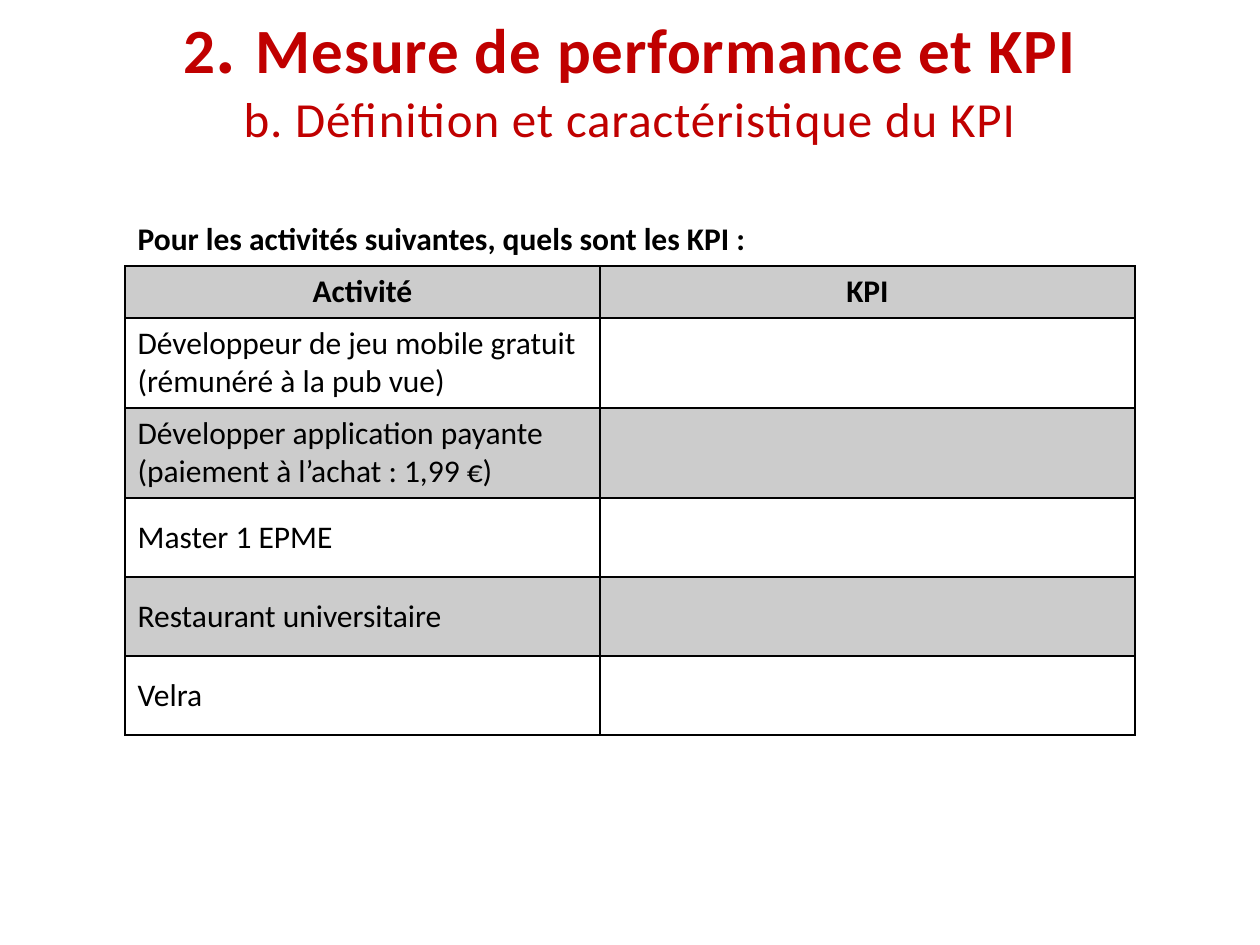
from dataclasses import dataclass

from lxml.etree import SubElement
from pptx import Presentation
from pptx.dml.color import RGBColor
from pptx.enum.text import MSO_ANCHOR, PP_ALIGN
from pptx.oxml.ns import qn
from pptx.util import Emu, Pt


@dataclass(frozen=True)
class Theme:
    """Colours, font and type sizes of the slide."""
    font: str = "Calibri"
    accent: str = "C00000"
    ink: str = "000000"
    title_size: int = 36
    dot_size: int = 44
    subtitle_size: int = 28
    body_size: int = 18
    band_opacity: int = 20
    border_width: int = 1
    title_tracking: int = 50


THEME = Theme()
PX_PER_INCH = 126
NO_STYLE = "{2D5ABB26-0587-4C30-8999-92F81FD0307C}"
QUESTION = "Pour les activités suivantes, quels sont les KPI :"
HEADINGS = ("Activité", "KPI")
ACTIVITIES = (
    "Développeur de jeu mobile gratuit (rémunéré à la pub vue)",
    "Développer application payante\n(paiement à l’achat : 1,99 €)",
    "Master 1 EPME",
    "Restaurant universitaire",
    "Velra",
)
COLUMN_WIDTHS = (475, 535)
ROW_HEIGHTS = (52, 52, 90, 90, 79, 79, 79)


def px(length):
    """Turn pixels into EMU."""
    return Emu(round(length * 914400 / PX_PER_INCH))


def add_text(paragraph, text, *, size=THEME.body_size, bold=False,
             color=THEME.ink, align=PP_ALIGN.LEFT, tracking=0):
    """Append a formatted run to a paragraph."""
    paragraph.alignment = align
    run = paragraph.add_run()
    run.text = text
    run.font.name = THEME.font
    run.font.size = Pt(size)
    run.font.bold = bold
    run.font.color.rgb = RGBColor.from_string(color)
    if tracking:
        run.font._element.set("spc", str(tracking))


def add_title(slide):
    """Add the two-line centred title."""
    frame = slide.shapes.add_textbox(px(63), px(-14), px(1134), px(158)).text_frame
    frame.word_wrap = True
    frame.vertical_anchor = MSO_ANCHOR.TOP
    frame.margin_top = px(10)
    style = {"color": THEME.accent, "align": PP_ALIGN.CENTER,
             "tracking": THEME.title_tracking}
    heading = frame.paragraphs[0]
    for text, size in (("2", THEME.title_size), (". ", THEME.dot_size),
                       ("Mesure de performance et KPI", THEME.title_size)):
        add_text(heading, text, size=size, bold=True, **style)
    add_text(frame.add_paragraph(), "b. Définition et caractéristique du KPI",
             size=THEME.subtitle_size, **style)


def fill_cell(cell, text, **style):
    """Write one paragraph per line into a cell."""
    frame = cell.text_frame
    for index, line in enumerate(text.split("\n")):
        paragraph = frame.add_paragraph() if index else frame.paragraphs[0]
        add_text(paragraph, line, **style)


def border_cell(cell, sides):
    """Draw a thin line on the given sides of a cell."""
    properties = cell._tc.get_or_add_tcPr()
    for side in sides:
        line = SubElement(properties, qn(f"a:ln{side}"), w=str(Pt(THEME.border_width)))
        fill = SubElement(line, qn("a:solidFill"))
        SubElement(fill, qn("a:srgbClr"), val=THEME.ink)


def shade_cell(cell, shaded):
    """Give a cell a translucent band or no fill."""
    if not shaded:
        cell.fill.background()
        return
    cell.fill.solid()
    cell.fill.fore_color.rgb = RGBColor.from_string(THEME.ink)
    color = cell._tc.tcPr.find(f"{qn('a:solidFill')}/{qn('a:srgbClr')}")
    SubElement(color, qn("a:alpha"), val=str(THEME.band_opacity * 1000))


def add_activity_table(slide):
    """Add the table of activities with an empty KPI column."""
    table = slide.shapes.add_table(
        len(ROW_HEIGHTS), len(COLUMN_WIDTHS), px(125), px(214),
        px(sum(COLUMN_WIDTHS)), px(sum(ROW_HEIGHTS))).table
    table.first_row = table.horz_banding = False
    table._tbl.tblPr.find(qn("a:tableStyleId")).text = NO_STYLE
    for column, width in zip(table.columns, COLUMN_WIDTHS):
        column.width = px(width)
    for index, (row, height) in enumerate(zip(table.rows, ROW_HEIGHTS)):
        row.height = px(height)
        for cell in row.cells:
            border_cell(cell, "LRTB" if index else "B")
            shade_cell(cell, index % 2 == 1)
            cell.vertical_anchor = MSO_ANCHOR.MIDDLE if index else MSO_ANCHOR.TOP
    question = table.cell(0, 0)
    question.merge(table.cell(0, 1))
    fill_cell(question, QUESTION, bold=True)
    for column, heading in enumerate(HEADINGS):
        fill_cell(table.cell(1, column), heading, bold=True, align=PP_ALIGN.CENTER)
    for index, activity in enumerate(ACTIVITIES, start=2):
        fill_cell(table.cell(index, 0), activity)


def main():
    """Build and save the slide."""
    deck = Presentation()
    deck.slide_width, deck.slide_height = px(1260), px(945)
    slide = deck.slides.add_slide(deck.slide_layouts[6])
    add_title(slide)
    add_activity_table(slide)
    deck.save("out.pptx")


if __name__ == "__main__":
    main()
